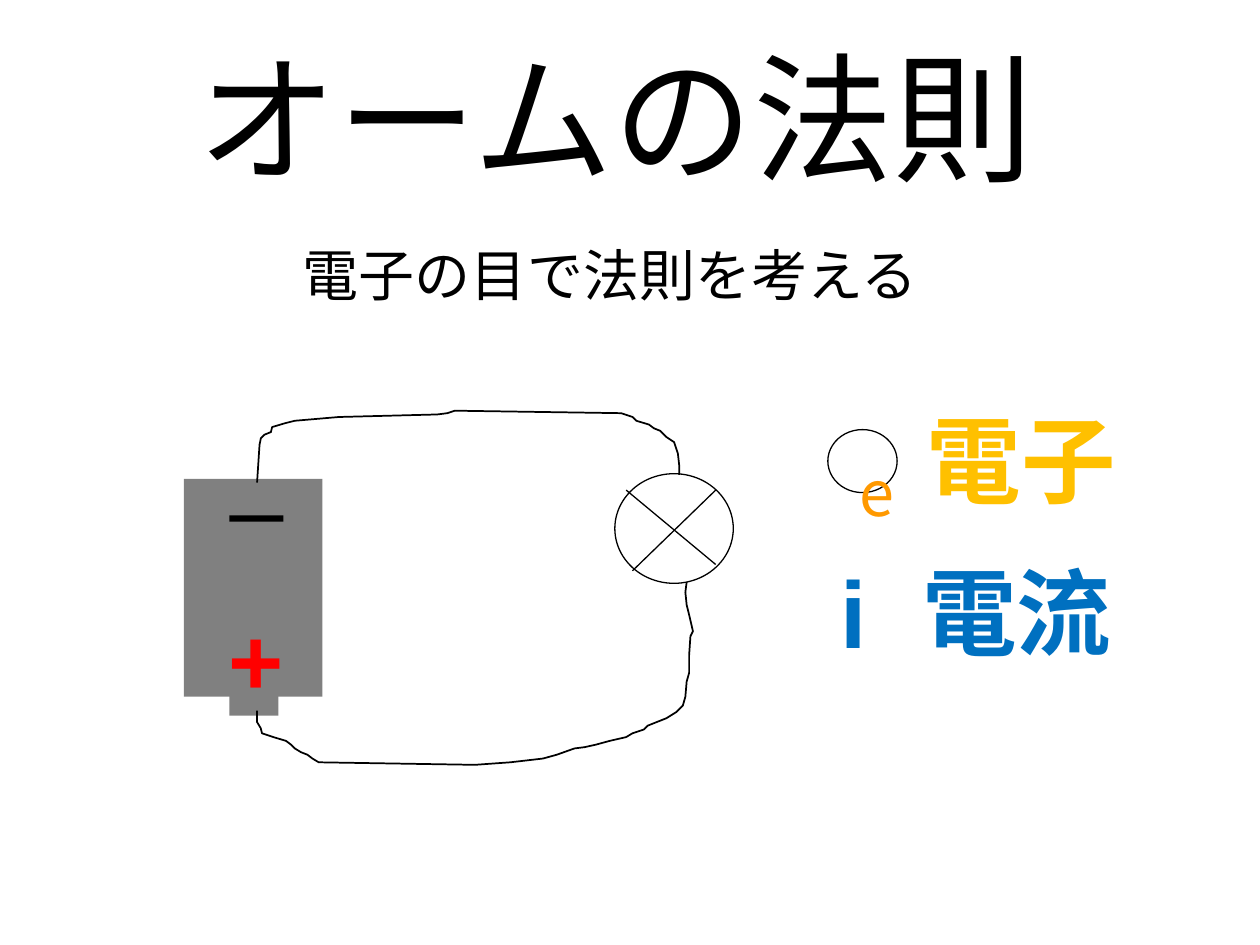
"""Build the title slide on Ohm's law with a battery and lamp circuit."""
from lxml.etree import SubElement
from pptx import Presentation
from pptx.dml.color import RGBColor
from pptx.enum.shapes import MSO_CONNECTOR, MSO_SHAPE
from pptx.enum.text import MSO_ANCHOR, MSO_AUTO_SIZE, PP_ALIGN
from pptx.oxml.ns import qn
from pptx.util import Inches, Pt

BLACK = RGBColor(0x00, 0x00, 0x00)
GRAY = RGBColor(0x80, 0x80, 0x80)
RED = RGBColor(0xFF, 0x00, 0x00)
BLUE = RGBColor(0x00, 0x70, 0xC0)
GOLD = RGBColor(0xFF, 0xC0, 0x00)
ORANGE = RGBColor(0xFF, 0x99, 0x00)

UPPER_WIRE = [
    (2.04, 3.83), (2.06, 3.53), (2.07, 3.48), (2.1, 3.45), (2.15, 3.43), (2.16, 3.39),
    (2.26, 3.36), (2.34, 3.34), (2.46, 3.33), (2.69, 3.31), (3.47, 3.29), (3.55, 3.28),
    (3.61, 3.26), (4.93, 3.28), (5.02, 3.31), (5.05, 3.34), (5.15, 3.37), (5.19, 3.4),
    (5.24, 3.42), (5.29, 3.47), (5.35, 3.51), (5.38, 3.6), (5.39, 3.69), (5.39, 3.77),
]
LOWER_WIRE = [
    (5.45, 4.62), (5.44, 4.7), (5.45, 4.8), (5.47, 4.88), (5.5, 5.01), (5.48, 5.05),
    (5.47, 5.2), (5.47, 5.34), (5.45, 5.41), (5.44, 5.53), (5.42, 5.6), (5.37, 5.65),
    (5.29, 5.7), (5.19, 5.74), (5.14, 5.76), (5.11, 5.79), (5.02, 5.82), (4.97, 5.85),
    (4.84, 5.88), (4.73, 5.91), (4.64, 5.93), (4.56, 5.94), (4.42, 5.99), (4.31, 6.02),
    (4.14, 6.04), (4.05, 6.05), (3.77, 6.07), (2.53, 6.05), (2.48, 6.02), (2.44, 5.99),
    (2.39, 5.97), (2.34, 5.94), (2.31, 5.91), (2.27, 5.88), (2.17, 5.85), (2.08, 5.82),
    (2.07, 5.78), (2.04, 5.73), (2.04, 5.64),
]


def add_figure(shapes, kind, bounds, fill=None):
    figure = shapes.add_shape(kind, *map(Inches, bounds))
    figure.shadow.inherit = False
    if fill is None:
        figure.fill.background()
        figure.line.color.rgb = BLACK
        figure.line.width = Pt(0.75)
    else:
        figure.fill.solid()
        figure.fill.fore_color.rgb = fill
        figure.line.fill.background()


def write(box, text, size, color, bold=False, font="Arial"):
    frame = box.text_frame
    frame.text = text
    paragraph = frame.paragraphs[0]
    paragraph.alignment = PP_ALIGN.CENTER
    span = paragraph.runs[0]
    span.font.size = Pt(size)
    span.font.name = font
    span.font.bold = bold
    span.font.color.rgb = color


deck = Presentation()
deck.slide_width = Inches(10)
deck.slide_height = Inches(7.5)
page = deck.slides.add_slide(deck.slide_layouts[0])

headings = [
    (page.shapes.title, (0.75, 0.21, 8.27, 1.42), "オームの法則", 80, MSO_ANCHOR.MIDDLE),
    (page.placeholders[1], (1.42, 1.86, 6.85, 0.63), "電子の目で法則を考える", 32, MSO_ANCHOR.TOP),
]
for box, bounds, text, size, anchor in headings:
    box.left, box.top, box.width, box.height = map(Inches, bounds)
    box.text_frame.auto_size = MSO_AUTO_SIZE.NONE
    box.text_frame.vertical_anchor = anchor
    write(box, text, size, BLACK)

circuit = page.shapes.add_group_shape().shapes
add_figure(circuit, MSO_SHAPE.RECTANGLE, (1.46, 3.8, 1.1, 1.73), GRAY)
add_figure(circuit, MSO_SHAPE.RECTANGLE, (1.82, 5.52, 0.39, 0.16), GRAY)

for ends in [(5.68, 3.89, 5.02, 4.53), (4.97, 3.89, 5.68, 4.48)]:
    cross = circuit.add_connector(MSO_CONNECTOR.STRAIGHT, *map(Inches, ends))
    cross.line.color.rgb = BLACK
    cross.line.width = Pt(0.75)
    SubElement(cross._element.spPr, qn("a:effectLst"))
add_figure(circuit, MSO_SHAPE.OVAL, (4.88, 3.76, 0.94, 0.87))

for points in (UPPER_WIRE, LOWER_WIRE):
    corners = [(Inches(x), Inches(y)) for x, y in points]
    builder = circuit.build_freeform(*corners[0])
    builder.add_line_segments(corners[1:], close=False)
    wire = builder.convert_to_shape()
    wire.shadow.inherit = False
    wire.fill.background()
    wire.line.color.rgb = BLACK
    wire.line.width = Pt(1)

add_figure(circuit, MSO_SHAPE.RECTANGLE, (1.82, 4.09, 0.43, 0.05), BLACK)

labels = [
    (circuit, (1.62, 4.72, 0.83, 1.01), "+", RED),
    (page.shapes, (6.57, 4.35, 0.39, 1.01), "i", BLUE),
    (page.shapes, (7.21, 4.35, 1.72, 1.01), "電流", BLUE),
    (page.shapes, (7.12, 3.14, 1.97, 1.01), "電子", GOLD),
]
for shapes, bounds, text, color in labels:
    label = shapes.add_textbox(*map(Inches, bounds))
    label.text_frame.word_wrap = True
    write(label, text, 54, color, bold=True)

electron = page.shapes.add_group_shape().shapes
add_figure(electron, MSO_SHAPE.OVAL, (6.57, 3.41, 0.55, 0.5))
symbol = electron.add_textbox(*map(Inches, (6.72, 3.55, 0.26, 0.22)))
symbol.text_frame.word_wrap = False
write(symbol, "e", 36, ORANGE, font="Noto Sans CJK JP")

deck.save("out.pptx")
